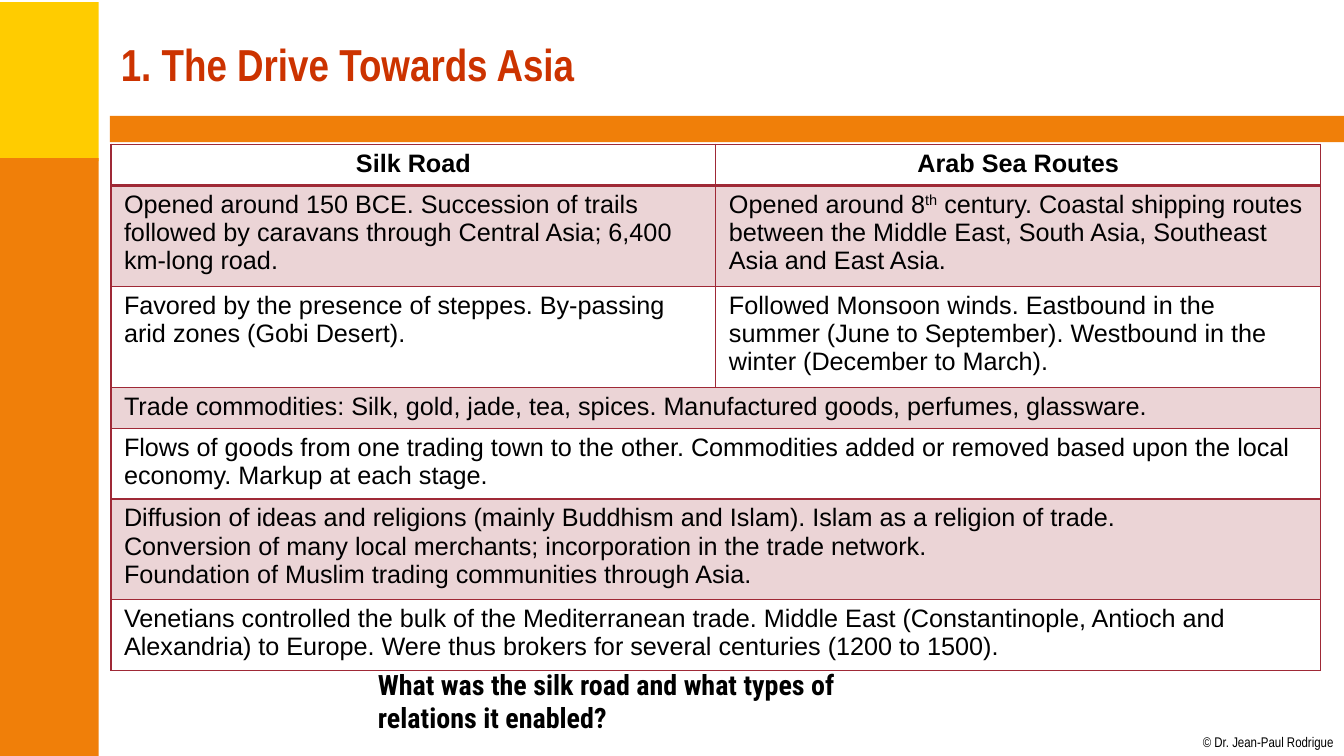
from lxml import etree
from pptx import Presentation
from pptx.dml.color import RGBColor
from pptx.enum.shapes import MSO_SHAPE
from pptx.enum.text import MSO_ANCHOR, PP_ALIGN
from pptx.oxml.ns import qn
from pptx.util import Emu, Pt

RECTANGLE = MSO_SHAPE.RECTANGLE
MIDDLE, TOP = MSO_ANCHOR.MIDDLE, MSO_ANCHOR.TOP
LEFT, CENTER = PP_ALIGN.LEFT, PP_ALIGN.CENTER

PX = 9144  # 100 px to the inch
YELLOW, ORANGE, RED, MAROON, BLACK = "FFCC00", "F07F09", "CC3300", "9F2936", "000000"

HEADINGS = ["Silk Road", "Arab Sea Routes"]
# Each row holds its cells; a row with one cell spans both columns.
# A cell is a list of paragraphs, and a paragraph a list of runs; "^" marks a superscript.
ROWS = [
    (94, [[["Opened around 150 BCE. Succession of trails followed by caravans "
            "through Central Asia; 6,400 km-long road."]],
          [["Opened around 8", "^th", " century. Coastal shipping routes between the "
            "Middle East, South Asia, Southeast Asia and East Asia."]]]),
    (94, [[["Favored by the presence of steppes. By-passing arid zones (Gobi Desert)."]],
          [["Followed Monsoon winds. Eastbound in the summer (June to September). "
            "Westbound in the winter (December to March)."]]]),
    (41, [[["Trade commodities: Silk, gold, jade, tea, spices. Manufactured goods, "
            "perfumes, glassware."]]]),
    (66, [[["Flows of goods from one trading town to the other. Commodities added or "
            "removed based upon the local economy. Markup at each stage."]]]),
    (94, [[["Diffusion of ideas and religions (mainly Buddhism and Islam). "
            "Islam as a religion of trade."],
           ["Conversion of many local merchants; incorporation in the trade network."],
           ["Foundation of Muslim trading communities through Asia."]]]),
    (66, [[["Venetians controlled the bulk of the Mediterranean trade. Middle East "
            "(Constantinople, Antioch and Alexandria) to Europe. Were thus brokers for "
            "several centuries (1200 to 1500)."]]]),
]


def px(*lengths):
    return [Emu(length * PX) for length in lengths]


def color(hex_code):
    return RGBColor.from_string(hex_code)


def add_run(paragraph, text, font, size, hex_code, bold=False):
    run = paragraph.add_run()
    run.text = text.removeprefix("^")
    run.font.name = font
    run.font.size = Pt(size)
    run.font.bold = bold
    run.font.color.rgb = color(hex_code)
    if text.startswith("^"):
        run.font._element.set("baseline", "30000")


def add_band(slide, place, hex_code):
    band = slide.shapes.add_shape(RECTANGLE, *px(*place))
    band.shadow.inherit = False
    band.fill.solid()
    band.fill.fore_color.rgb = color(hex_code)
    band.line.fill.background()


def add_label(slide, place, text, font, size, hex_code, bold=True, anchor=TOP, tight=False):
    frame = slide.shapes.add_textbox(*px(*place)).text_frame
    frame.word_wrap = not tight
    frame.vertical_anchor = anchor
    if tight:
        frame.margin_left = frame.margin_top = frame.margin_right = frame.margin_bottom = 0
    add_run(frame.paragraphs[0], text, font, size, hex_code, bold)


def fill_cell(cell, shaded):
    if not shaded:
        cell.fill.background()
        return
    cell.fill.solid()
    cell.fill.fore_color.rgb = color(MAROON)
    tint = cell._tc.tcPr.find(f"{qn('a:solidFill')}/{qn('a:srgbClr')}")
    etree.SubElement(tint, qn("a:alpha"), val="20000")


def border_cell(cell, top, bottom):
    properties = cell._tc.get_or_add_tcPr()
    sides = [("a:lnL", 1), ("a:lnR", 1), ("a:lnT", top), ("a:lnB", bottom)]
    for position, (side, width) in enumerate(sides):
        line = etree.Element(qn(side), w=str(Pt(width)))
        paint = etree.SubElement(line, qn("a:solidFill"))
        etree.SubElement(paint, qn("a:srgbClr"), val=MAROON)
        properties.insert(position, line)


def write_cell(cell, paragraphs, bold, align):
    cell.margin_left, cell.margin_top, cell.margin_right, cell.margin_bottom = px(13, 5, 13, 5)
    for index, runs in enumerate(paragraphs):
        frame = cell.text_frame
        paragraph = frame.add_paragraph() if index else frame.paragraphs[0]
        paragraph.alignment = align
        for text in runs:
            add_run(paragraph, text, "Arial", 18, BLACK, bold)


def add_routes_table(slide):
    rows = [(41, [[[heading]] for heading in HEADINGS])] + ROWS
    height = sum(row_height for row_height, _ in rows)
    table = slide.shapes.add_table(len(rows), 2, *px(110, 143, 1200, height)).table
    table.first_row = table.horz_banding = False
    for index, (row_height, contents) in enumerate(rows):
        table.rows[index].height = px(row_height)[0]
        is_heading = index == 0
        for cell in table.rows[index].cells:
            fill_cell(cell, shaded=index % 2 == 1)
            border_cell(cell, top=2 if index == 1 else 1, bottom=2 if is_heading else 1)
        if len(contents) == 1:
            table.cell(index, 0).merge(table.cell(index, 1))
        for column, paragraphs in enumerate(contents):
            write_cell(table.cell(index, column), paragraphs, is_heading,
                       CENTER if is_heading else LEFT)


def main():
    deck = Presentation()
    deck.slide_width, deck.slide_height = px(1333, 750)
    slide = deck.slides.add_slide(deck.slide_layouts[6])

    # Colour bands
    add_band(slide, (-2, 2, 100, 158), YELLOW)
    add_band(slide, (-2, 157, 100, 593), ORANGE)
    add_band(slide, (109, 115, 1224, 26), ORANGE)

    # Copyright and title
    add_label(slide, (1193, 728, 131, 17), "© Dr. Jean-Paul Rodrigue",
              "Arial Narrow", 10, BLACK, bold=False, tight=True)
    add_label(slide, (110, 11, 1200, 104), "1. The Drive Towards Asia",
              "Arial Narrow", 32, RED, anchor=MIDDLE)

    # Comparison table and question
    add_routes_table(slide)
    add_label(slide, (365, 657, 499, 77),
              "What was the silk road and what types of relations it enabled?",
              "Roboto Condensed", 20, BLACK)

    deck.save("out.pptx")


if __name__ == "__main__":
    main()
